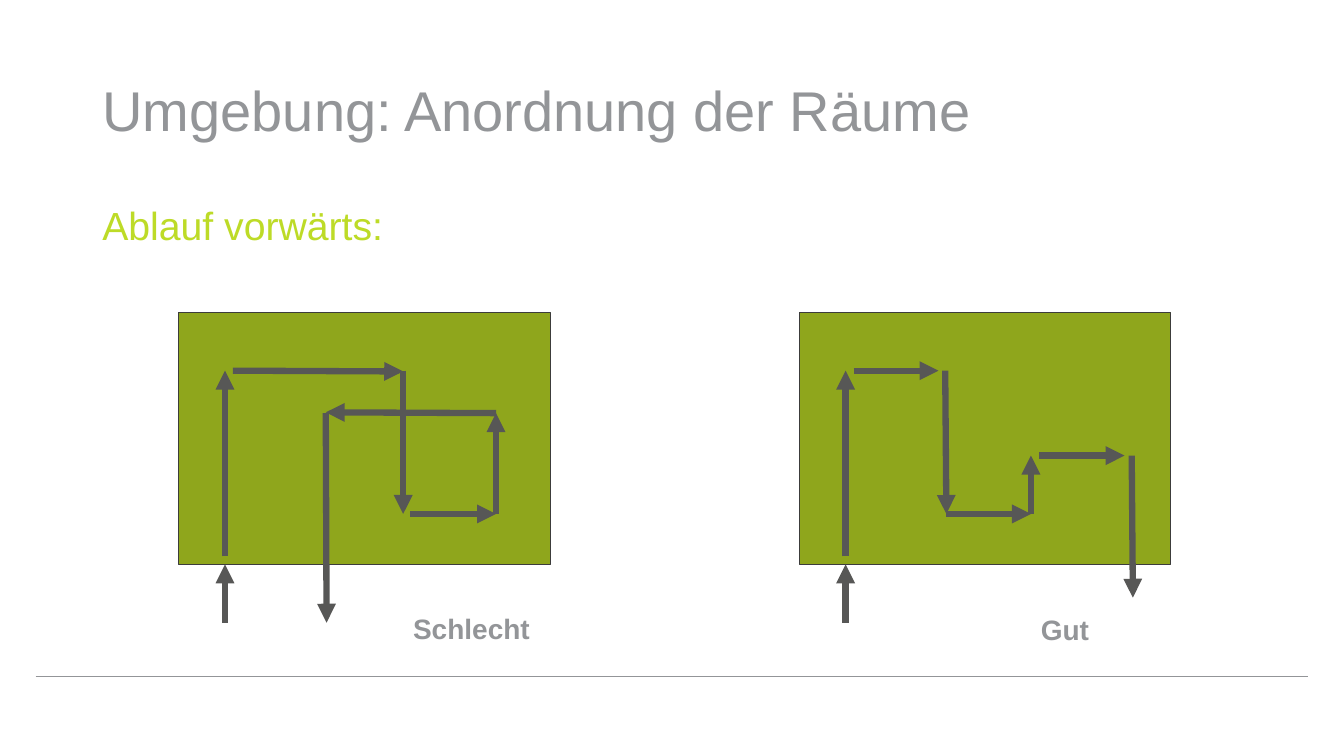
import pptx
import pptx.util
import pptx.dml.color
import pptx.enum.shapes
import pptx.enum.text
import pptx.oxml.ns
from lxml import etree
from pptx.util import Cm

COLORS = {
    "text": "939598",
    "accent": "BDDB27",
    "room": "8FA61C",
    "outline": "3C3C3B",
    "arrow": "575756",
}

# Positions in a plan are in cm from the top left corner of its room
ROOM_TOP, ROOM_WIDTH, ROOM_HEIGHT = 7.87, 9.37, 6.35
ENTRANCE = [
    ((1.17, 7.82), (1.17, ROOM_HEIGHT)),
    ((1.17, 6.15), (1.17, 1.47)),
]
PLANS = [
    {
        "left": 4.5,
        "label": ("Schlecht", 5.66, 7.42, 3.91),
        "route": [
            ((1.37, 1.47), (5.66, 1.49)),
            ((5.66, 1.47), (5.66, 5.08)),
            ((5.84, 5.08), (8, 5.08)),
            ((8, 5.08), (8, 2.54)),
            ((8, 2.54), (3.71, 2.52)),
            ((3.71, 2.54), (3.73, 7.82)),
        ],
    },
    {
        "left": 20.14,
        "label": ("Gut", 5.84, 7.44, 2.74),
        "route": [
            ((1.37, 1.47), (3.51, 1.47)),
            ((3.68, 1.47), (3.71, 5.08)),
            ((3.71, 5.08), (5.84, 5.08)),
            ((5.84, 5.08), (5.84, 3.61)),
            ((6.05, 3.61), (8.2, 3.61)),
            ((8.38, 3.61), (8.41, 7.19)),
        ],
    },
]


def rgb(name):
    return pptx.dml.color.RGBColor.from_string(COLORS[name])


def write_text(shape, text, size, color="text", bold=False, spacing=1.0,
               anchor=pptx.enum.text.MSO_ANCHOR.TOP):
    frame = shape.text_frame
    frame.word_wrap = True
    frame.auto_size = pptx.enum.text.MSO_AUTO_SIZE.NONE
    frame.vertical_anchor = anchor
    paragraph = frame.paragraphs[0]
    paragraph.alignment = pptx.enum.text.PP_ALIGN.LEFT
    paragraph.line_spacing = spacing
    run = paragraph.add_run()
    run.text = text
    run.font.name = "Arial"
    run.font.size = pptx.util.Pt(size)
    run.font.bold = bold
    run.font.color.rgb = rgb(color)


def add_line(shapes, start, end, color, width, arrow=False):
    line = shapes.add_connector(
        pptx.enum.shapes.MSO_CONNECTOR.STRAIGHT,
        Cm(start[0]), Cm(start[1]), Cm(end[0]), Cm(end[1]))
    line.line.color.rgb = rgb(color)
    line.line.width = pptx.util.Pt(width)
    if arrow:
        outline = line.line._get_or_add_ln()
        etree.SubElement(outline, pptx.oxml.ns.qn("a:tailEnd"), type="triangle")
    properties = line._element.spPr
    etree.SubElement(properties, pptx.oxml.ns.qn("a:effectLst"))


def add_room(shapes, left):
    room = shapes.add_shape(
        pptx.enum.shapes.MSO_SHAPE.RECTANGLE,
        Cm(left), Cm(ROOM_TOP), Cm(ROOM_WIDTH), Cm(ROOM_HEIGHT))
    room.shadow.inherit = False
    room.fill.solid()
    room.fill.fore_color.rgb = rgb("room")
    room.line.color.rgb = rgb("outline")
    room.line.width = pptx.util.Pt(0.75)


def add_plan(slide, left, label, route):
    shapes = slide.shapes.add_group_shape().shapes
    text, x, y, width = label
    box = shapes.add_textbox(Cm(left + x), Cm(ROOM_TOP + y), Cm(width), Cm(1.12))
    write_text(box, text, size=20, bold=True)
    add_room(shapes, left)
    for (x1, y1), (x2, y2) in ENTRANCE + route:
        add_line(shapes, (left + x1, ROOM_TOP + y1), (left + x2, ROOM_TOP + y2),
                 "arrow", 4.5, arrow=True)


def main():
    presentation = pptx.Presentation()
    presentation.slide_width = Cm(33.87)
    presentation.slide_height = Cm(19.05)
    slide = presentation.slides.add_slide(presentation.slide_layouts[5])

    # Footer rule
    add_line(slide.shapes, (0.9, 17.05), (32.97, 17.05), "text", 1)

    # Title and subtitle
    title = slide.shapes.title
    title.left, title.top = Cm(2.33), Cm(1.01)
    title.width, title.height = Cm(29.21), Cm(3.68)
    write_text(title, "Umgebung: Anordnung der Räume", size=40, spacing=0.9,
               anchor=pptx.enum.text.MSO_ANCHOR.MIDDLE)
    subtitle = slide.shapes.add_textbox(Cm(2.33), Cm(5.07), Cm(29.21), Cm(1.5))
    write_text(subtitle, "Ablauf vorwärts:", size=28, color="accent", spacing=0.9)

    # Bad and good room plans
    for plan in PLANS:
        add_plan(slide, **plan)

    presentation.save("out.pptx")


if __name__ == "__main__":
    main()
